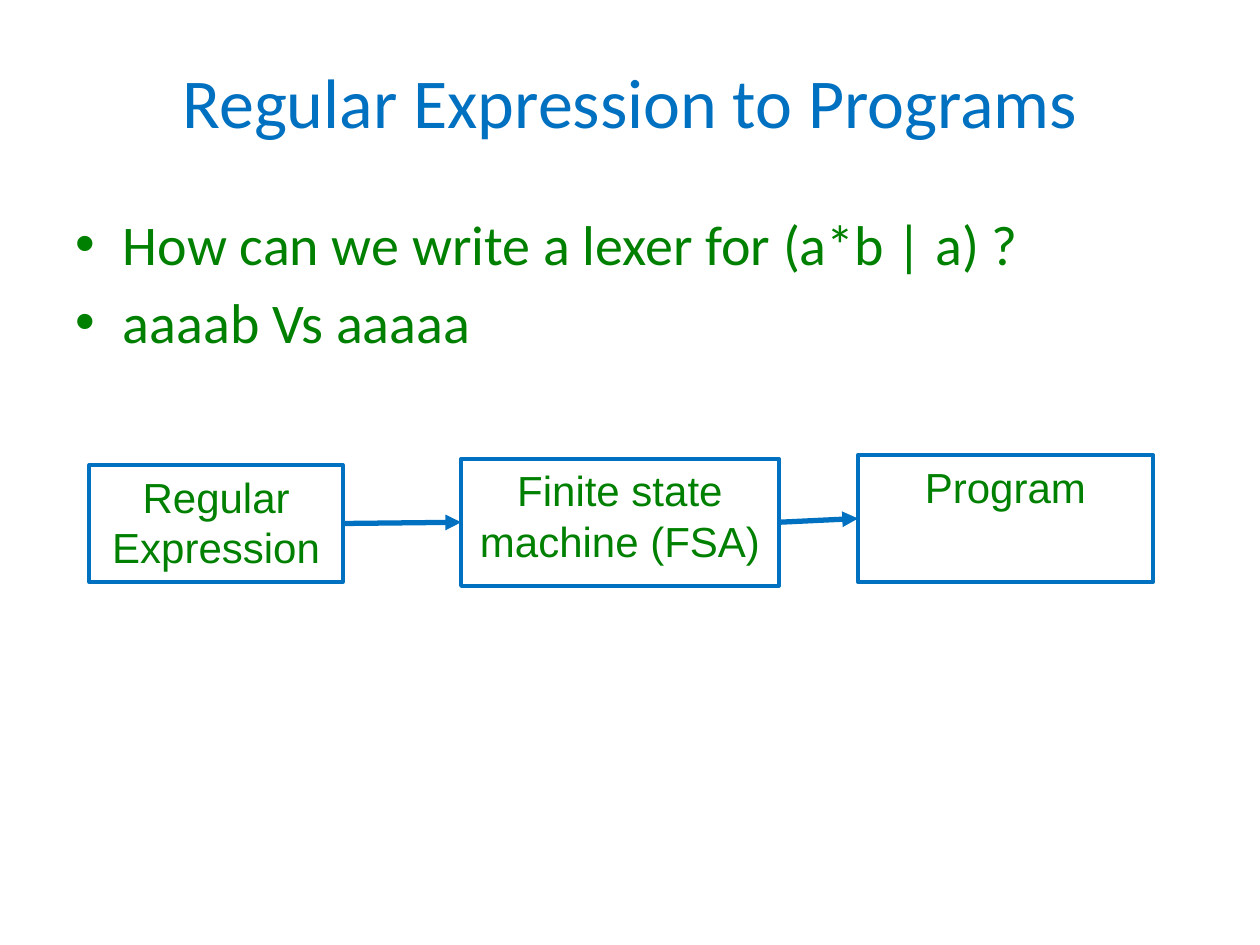
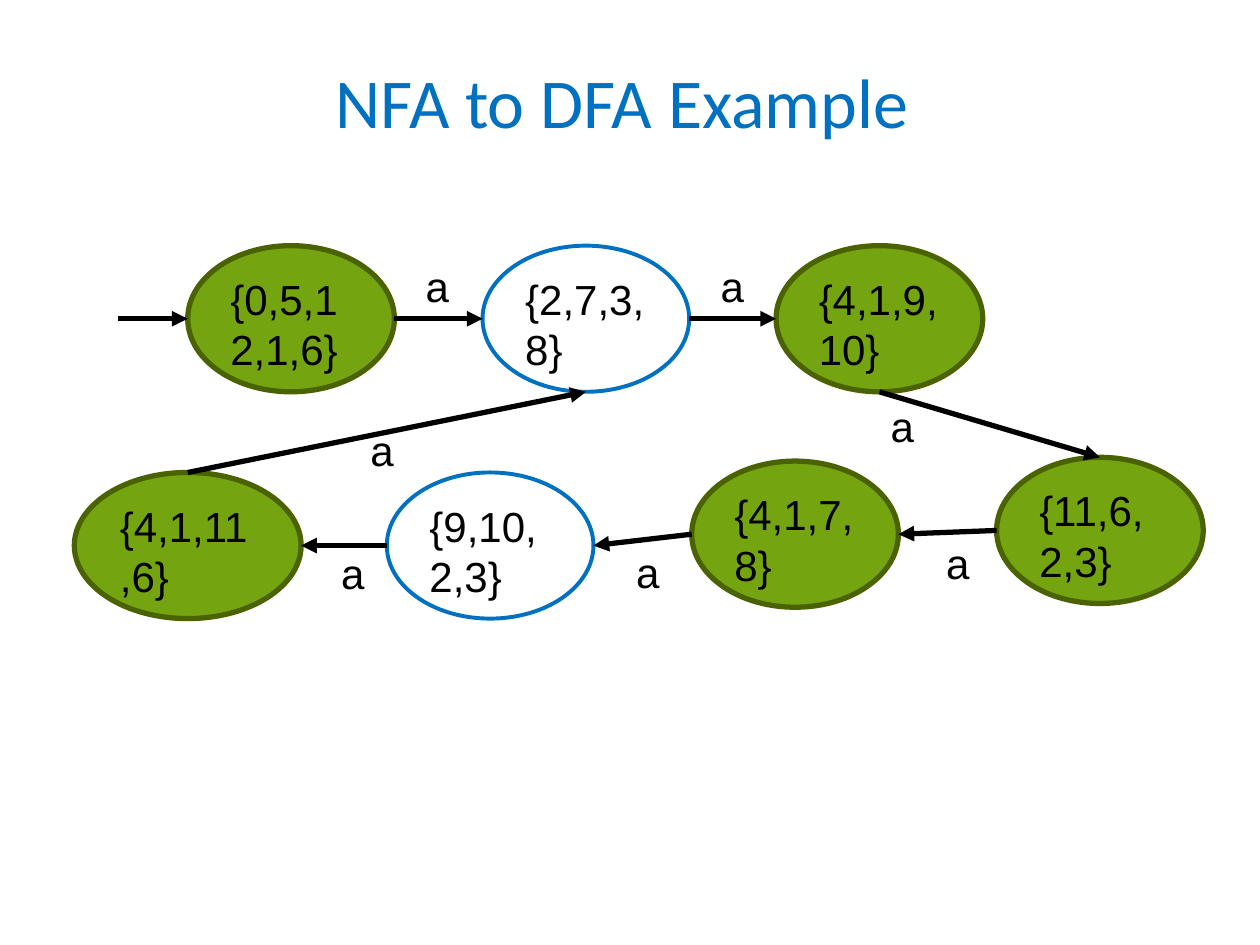
import pptx
import pptx.util
import pptx.dml.color
import pptx.enum.shapes
import pptx.enum.text
import pptx.oxml
import pptx.oxml.ns

Inches = pptx.util.Inches
Pt = pptx.util.Pt
SHAPE = pptx.enum.shapes.MSO_SHAPE
ALIGN = pptx.enum.text.PP_ALIGN
ANCHOR = pptx.enum.text.MSO_ANCHOR

COLORS = {
    "blue": "0070C0",
    "green": "008000",
    "accepting": "74A510",
    "accepting_line": "4A6300",
    "black": "000000",
}
TITLE_ONLY, TITLE_AND_BODY = 5, 1


def color(name):
    return pptx.dml.color.RGBColor.from_string(COLORS[name])


def place(shape, left, top, width, height):
    shape.left, shape.top = Inches(left), Inches(top)
    shape.width, shape.height = Inches(width), Inches(height)


def edge(shape, side):
    across, down = {"left": (0, 0.5), "right": (1, 0.5), "top": (0.5, 0), "bottom": (0.5, 1)}[side]
    return int(shape.left + across * shape.width), int(shape.top + down * shape.height)


class DeckBuilder:
    def __init__(self):
        self.deck = pptx.Presentation()
        self.deck.slide_width, self.deck.slide_height = Inches(10), Inches(7.5)
        self.page = None

    def new_page(self, title, layout):
        self.page = self.deck.slides.add_slide(self.deck.slide_layouts[layout])
        heading = self.page.shapes.title
        place(heading, 0.5, 0.17, 9, 1.25)
        heading.text_frame.vertical_anchor = ANCHOR.MIDDLE
        para = heading.text_frame.paragraphs[0]
        para.alignment = ALIGN.CENTER
        self.span(para, title, 40, "blue", "Calibri")

    def span(self, para, text, size, ink, font="Arial"):
        span = para.add_run()
        span.text = text
        span.font.name, span.font.size = font, Pt(size)
        span.font.color.rgb = color(ink)

    def bullets(self, lines):
        body = self.page.placeholders[1]
        place(body, 0.5, 1.61, 9, 5.09)
        for index, line in enumerate(lines):
            frame = body.text_frame
            para = frame.add_paragraph() if index else frame.paragraphs[0]
            self.span(para, line, 32, "green", "Calibri")

    def outlined(self, kind, bounds, text, ink, align, line="blue", weight=2.25, fill=None):
        box = self.page.shapes.add_shape(kind, *map(Inches, bounds))
        box.shadow.inherit = False
        if fill:
            box.fill.solid()
            box.fill.fore_color.rgb = color(fill)
        else:
            box.fill.background()
        box.line.color.rgb = color(line)
        box.line.width = Pt(weight)
        box.text_frame.word_wrap = True
        box.text_frame.vertical_anchor = ANCHOR.TOP
        para = box.text_frame.paragraphs[0]
        para.alignment = align
        para.space_before = Pt(4.8)
        self.span(para, text, 24, ink)
        return box

    def stage(self, bounds, text):
        return self.outlined(SHAPE.RECTANGLE, bounds, text, "green", ALIGN.CENTER)

    def state(self, left, top, text, accepting, width=1.64):
        look = {"line": "accepting_line", "weight": 3, "fill": "accepting"} if accepting else {}
        bounds = (left, top, width, 1.16)
        return self.outlined(SHAPE.OVAL, bounds, text, "black", ALIGN.LEFT, **look)

    def arrow(self, start, end, ink):
        straight = pptx.enum.shapes.MSO_CONNECTOR.STRAIGHT
        arrow = self.page.shapes.add_connector(straight, *start, *end)
        arrow.line.color.rgb = color(ink)
        arrow.line.width = Pt(3)
        head = pptx.oxml.parse_xml(f'<a:tailEnd {pptx.oxml.ns.nsdecls("a")} type="triangle"/>')
        arrow.line._get_or_add_ln().append(head)
        no_effects = pptx.oxml.parse_xml(f'<a:effectLst {pptx.oxml.ns.nsdecls("a")}/>')
        arrow._element.spPr.append(no_effects)

    def label(self, left, top, text):
        box = self.page.shapes.add_textbox(*map(Inches, (left, top, 0.39, 0.5)))
        box.text_frame.word_wrap = False
        box.text_frame.auto_size = pptx.enum.text.MSO_AUTO_SIZE.SHAPE_TO_FIT_TEXT
        self.span(box.text_frame.paragraphs[0], text, 24, "black")


def lexer_page(builder):
    builder.new_page("Regular Expression to Programs", TITLE_AND_BODY)
    builder.bullets(["How can we write a lexer for (a*b | a) ?", "aaaab Vs aaaaa"])
    stages = [
        builder.stage((0.71, 3.69, 2.01, 0.93), "Regular Expression"),
        builder.stage((3.66, 3.64, 2.52, 1.01), "Finite state machine (FSA)"),
        builder.stage((6.81, 3.61, 2.34, 1.01), "Program"),
    ]
    for before, after in zip(stages, stages[1:]):
        builder.arrow(edge(before, "right"), edge(after, "left"), "blue")


def automaton_page(builder):
    builder.new_page("NFA to DFA Example ", TITLE_ONLY)
    states = [
        builder.state(1.49, 1.95, "{0,5,12,1,6}", True),
        builder.state(3.83, 1.95, "{2,7,3,8}", False),
        builder.state(6.16, 1.95, "{4,1,9,10}", True),
        builder.state(7.91, 3.63, "{11,6,2,3}", True),
        builder.state(5.49, 3.66, "{4,1,7,8}", True),
        builder.state(3.07, 3.75, "{9,10,2,3}", False),
        builder.state(0.59, 3.75, "{4,1,11,6}", True, width=1.8),
    ]
    entry = edge(states[0], "left")
    builder.arrow((Inches(0.94), entry[1]), entry, "black")
    transitions = [
        (0, "right", 1, "left", 3.28, 2.02),
        (1, "right", 2, "left", 5.62, 2.02),
        (2, "bottom", 3, "top", 6.97, 3.13),
        (3, "left", 4, "right", 7.41, 4.22),
        (4, "left", 5, "right", 4.95, 4.29),
        (5, "left", 6, "right", 2.61, 4.3),
        (6, "top", 1, "bottom", 2.84, 3.32),
    ]
    for source, exit_side, target, entry_side, left, top in transitions:
        builder.arrow(edge(states[source], exit_side), edge(states[target], entry_side), "black")
        builder.label(left, top, "a")


def main():
    builder = DeckBuilder()
    lexer_page(builder)
    automaton_page(builder)
    builder.deck.save("out.pptx")


if __name__ == "__main__":
    main()
